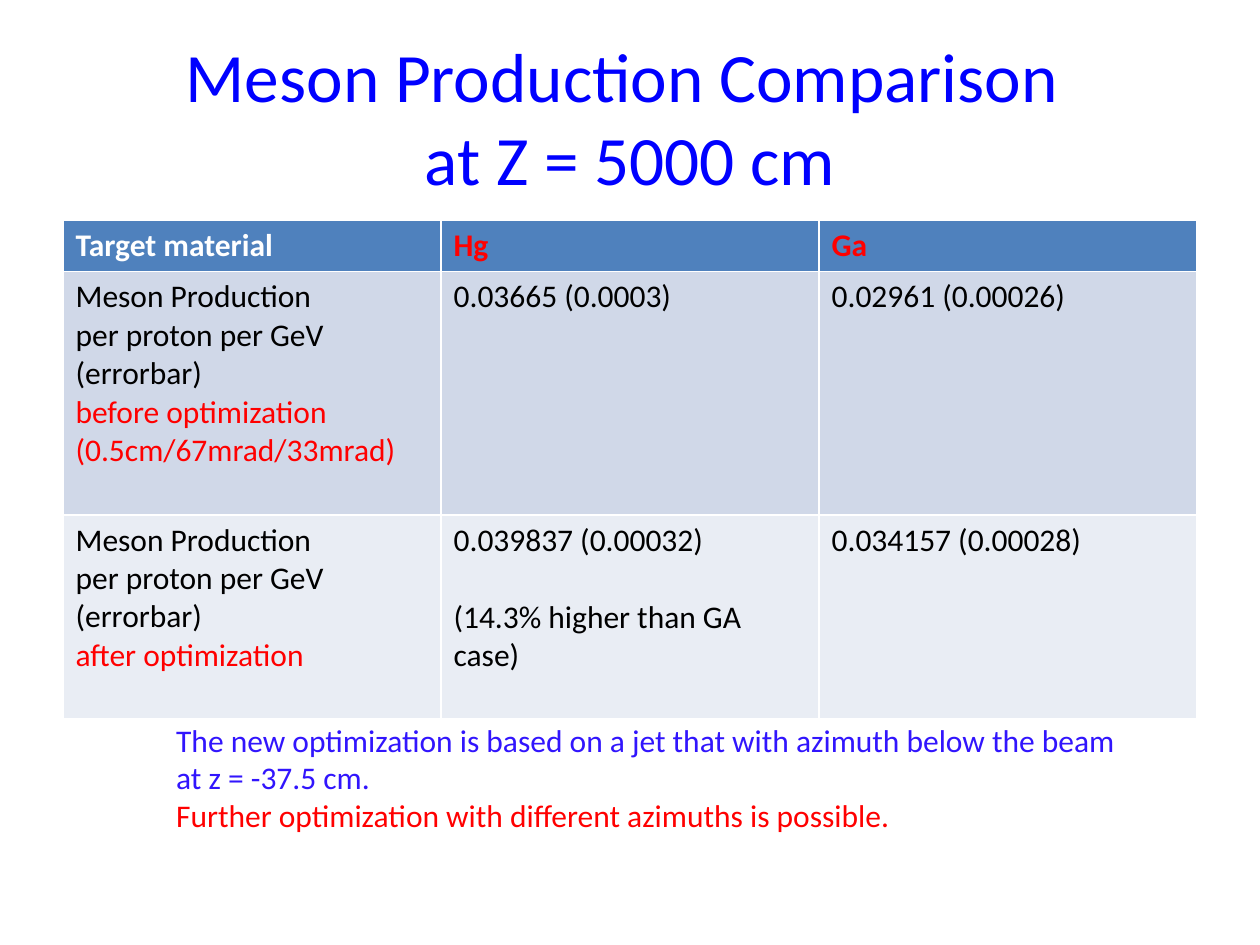
from pptx import Presentation
from pptx.dml.color import RGBColor
from pptx.enum.text import MSO_ANCHOR, MSO_AUTO_SIZE, PP_ALIGN
from pptx.util import Inches, Pt

BLACK, WHITE, RED, BLUE, INDIGO = "000000", "FFFFFF", "FF0000", "0000FF", "3115FD"


def style(para, color, size=18, bold=False):
    para.font.name = "Calibri"
    para.font.size = Pt(size)
    para.font.bold = bold
    para.font.color.rgb = RGBColor.from_string(color)


def write(frame, lines, bold=False):
    for index, (text, color) in enumerate(lines):
        para = frame.add_paragraph() if index else frame.paragraphs[0]
        para.text = text
        style(para, color, bold=bold)


deck = Presentation()
deck.slide_width, deck.slide_height = Inches(10), Inches(7.5)
page = deck.slides.add_slide(deck.slide_layouts[5])

# Title
title = page.shapes.title
title.left, title.top = Inches(0.5), Inches(0.3)
title.width, title.height = Inches(9), Inches(1.25)
title.text_frame.auto_size = MSO_AUTO_SIZE.NONE
title.text_frame.vertical_anchor = MSO_ANCHOR.MIDDLE
heading = title.text_frame.paragraphs[0]
heading.text = "Meson Production Comparison \vat Z = 5000 cm"
heading.alignment = PP_ALIGN.CENTER
style(heading, BLUE, size=39.6)

# Table: fill, height and cells of each row
quantity = [("Meson Production", BLACK), ("per proton per GeV (errorbar)", BLACK)]
rows = [
    ("4F81BD", 0.4, [
        [("Target material", WHITE)],
        [("Hg", RED)],
        [("Ga", RED)],
    ]),
    ("D0D8E8", 1.93, [
        quantity + [("before optimization", RED), ("(0.5cm/67mrad/33mrad)", RED)],
        [("0.03665 (0.0003)", BLACK)],
        [("0.02961 (0.00026)", BLACK)],
    ]),
    ("E9EDF4", 1.62, [
        quantity + [("after optimization", RED)],
        [("0.039837 (0.00032)", BLACK), ("(14.3% higher than GA case)", BLACK)],
        [("0.034157 (0.00028)", BLACK)],
    ]),
]
table = page.shapes.add_table(
    len(rows), 3, Inches(0.5), Inches(1.75), Inches(9), Inches(3.95)).table
for r, (fill, height, cells) in enumerate(rows):
    table.rows[r].height = Inches(height)
    for c, lines in enumerate(cells):
        cell = table.cell(r, c)
        cell.fill.solid()
        cell.fill.fore_color.rgb = RGBColor.from_string(fill)
        write(cell.text_frame, lines, bold=r == 0)

# One line of space above the remark on the Hg result
table.cell(2, 1).text_frame.paragraphs[1].space_before = Pt(22)

# Remarks below the table
box = page.shapes.add_textbox(Inches(1.3), Inches(5.67), Inches(7.7), Inches(1.01))
box.text_frame.word_wrap = True
box.text_frame.auto_size = MSO_AUTO_SIZE.SHAPE_TO_FIT_TEXT
write(box.text_frame, [
    ("The new optimization is based on a jet that with azimuth below the beam "
     "at z = -37.5 cm.", INDIGO),
    ("Further optimization with different azimuths is possible.", RED),
])

deck.save("out.pptx")
